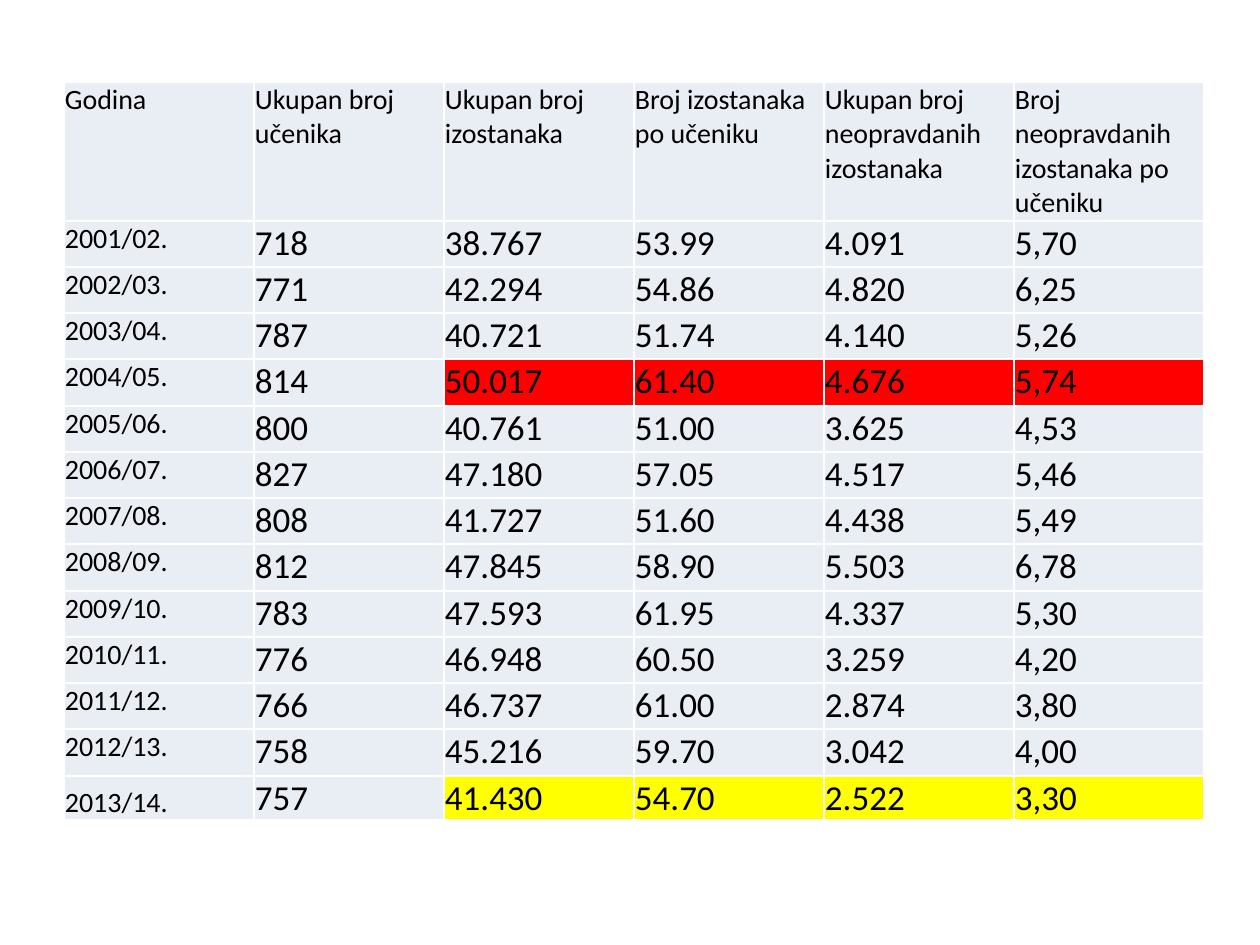
from lxml.etree import SubElement
from pptx import Presentation
from pptx.dml.color import RGBColor
from pptx.enum.text import MSO_VERTICAL_ANCHOR as Anchor
from pptx.oxml.ns import qn
from pptx.util import Pt

PX = 914400 // 126
COLORS = {"text": "000000", "border": "FFFFFF", "plain": "E9EDF4",
          "highest": "FF0000", "latest": "FFFF00"}
FONT = "Calibri"
LEFT, TOP, COLUMN_WIDTH = 64, 82, 190
HEADER_HEIGHT, LAST_HEIGHT = 139, 43
LABEL_SIZE, VALUE_SIZE = 16, 20

HEADERS = ["Godina", "Ukupan broj učenika", "Ukupan broj izostanaka",
           "Broj izostanaka po učeniku", "Ukupan broj neopravdanih izostanaka",
           "Broj neopravdanih izostanaka po učeniku"]
YEARS = [
    ["2001/02.", "718", "38.767", "53.99", "4.091", "5,70"],
    ["2002/03.", "771", "42.294", "54.86", "4.820", "6,25"],
    ["2003/04.", "787", "40.721", "51.74", "4.140", "5,26"],
    ["2004/05.", "814", "50.017", "61.40", "4.676", "5,74"],
    ["2005/06.", "800", "40.761", "51.00", "3.625", "4,53"],
    ["2006/07.", "827", "47.180", "57.05", "4.517", "5,46"],
    ["2007/08.", "808", "41.727", "51.60", "4.438", "5,49"],
    ["2008/09.", "812", "47.845", "58.90", "5.503", "6,78"],
    ["2009/10.", "783", "47.593", "61.95", "4.337", "5,30"],
    ["2010/11.", "776", "46.948", "60.50", "3.259", "4,20"],
    ["2011/12.", "766", "46.737", "61.00", "2.874", "3,80"],
    ["2012/13.", "758", "45.216", "59.70", "3.042", "4,00"],
    ["2013/14.", "757", "41.430", "54.70", "2.522", "3,30"],
]
HIGHLIGHTS = {"2004/05.": "highest", "2013/14.": "latest"}
LAST_ANCHORS = [Anchor.BOTTOM] * 2 + [Anchor.MIDDLE] * 3 + [Anchor.TOP]


def px(length):
    return length * PX


def color(name):
    return RGBColor.from_string(COLORS[name])


def add_borders(cell):
    properties = cell._tc.get_or_add_tcPr()
    for position, side in enumerate(("lnL", "lnR", "lnT", "lnB")):
        line = SubElement(properties, qn(f"a:{side}"), w=str(Pt(1)))
        fill = SubElement(line, qn("a:solidFill"))
        SubElement(fill, qn("a:srgbClr"), val=COLORS["border"])
        properties.insert(position, line)


def write_cell(cell, text, size, fill, anchor):
    cell.margin_left = cell.margin_right = cell.margin_top = px(1)
    cell.margin_bottom = 0
    cell.vertical_anchor = anchor
    cell.fill.solid()
    cell.fill.fore_color.rgb = color(fill)
    add_borders(cell)
    run = cell.text_frame.paragraphs[0].add_run()
    run.text = text
    run.font.name = FONT
    run.font.size = Pt(size)
    run.font.color.rgb = color("text")


def row_heights():
    middle = [47 if row % 4 == 0 else 46 for row in range(1, len(YEARS))]
    return [HEADER_HEIGHT, *middle, LAST_HEIGHT]


def add_absence_table(slide):
    rows = [HEADERS, *YEARS]
    heights = row_heights()
    table = slide.shapes.add_table(
        len(rows), len(HEADERS), px(LEFT), px(TOP),
        px(COLUMN_WIDTH * len(HEADERS)), px(sum(heights))).table
    table.horz_banding = False
    for column in table.columns:
        column.width = px(COLUMN_WIDTH)
    for row_index, (values, height) in enumerate(zip(rows, heights)):
        table.rows[row_index].height = px(height)
        is_last = values is rows[-1]
        highlight = HIGHLIGHTS.get(values[0], "plain")
        for column_index, text in enumerate(values):
            is_label = row_index == 0 or column_index == 0
            write_cell(
                table.cell(row_index, column_index), text,
                LABEL_SIZE if is_label else VALUE_SIZE,
                highlight if column_index >= 2 else "plain",
                LAST_ANCHORS[column_index] if is_last else Anchor.TOP)
    table.first_row = False


def main():
    presentation = Presentation()
    presentation.slide_width = px(1260)
    presentation.slide_height = px(945)
    slide = presentation.slides.add_slide(presentation.slide_layouts[6])
    add_absence_table(slide)
    presentation.save("out.pptx")


if __name__ == "__main__":
    main()
